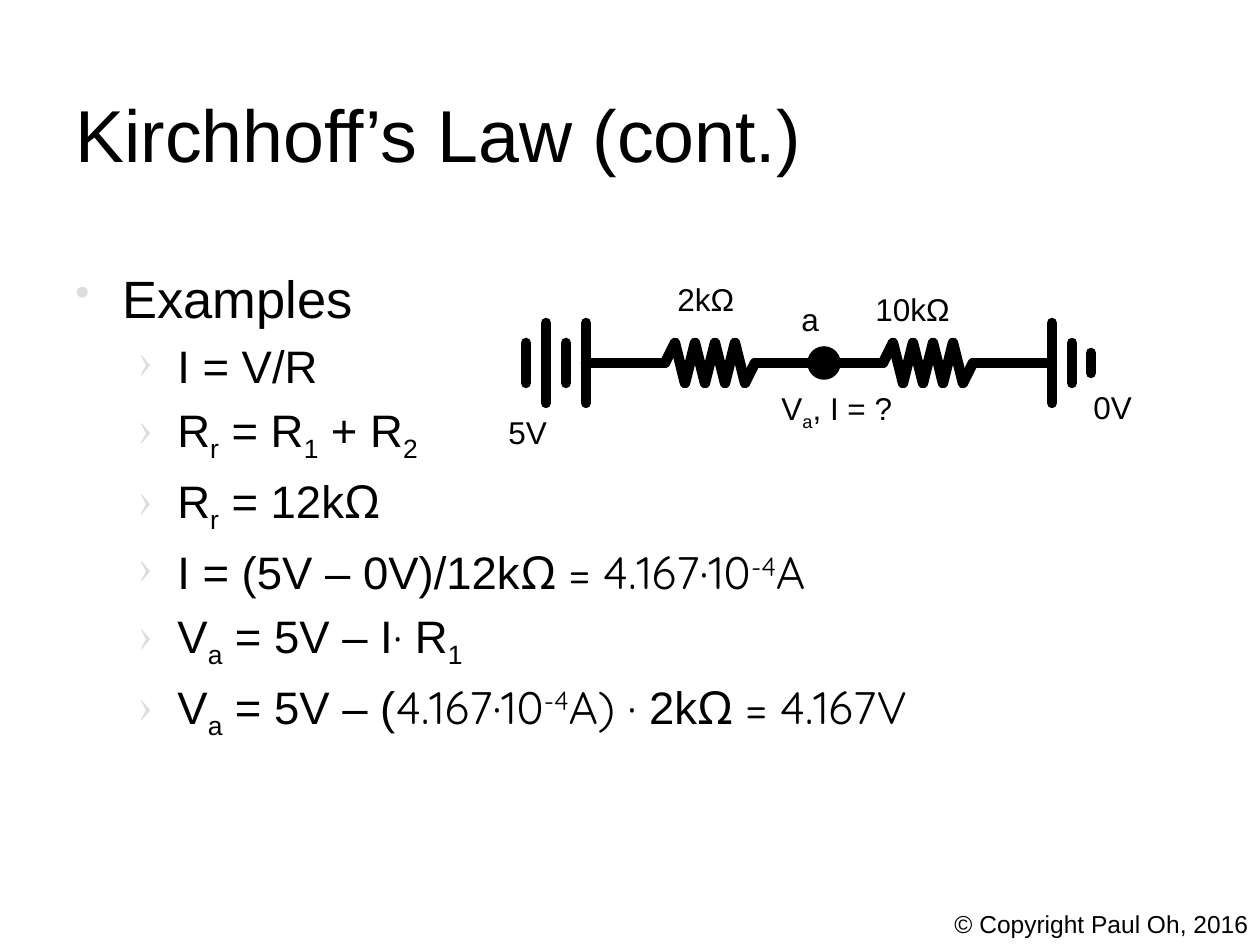
import itertools
from dataclasses import dataclass

import pptx
import pptx.dml.color
import pptx.enum.shapes
import pptx.enum.text
import pptx.oxml.ns
import pptx.oxml.xmlchemy
import pptx.util
from lxml import etree

SCALE = 914400 / 126
COLORS = {"ink": "000000", "bullet": "DDDDDD"}
SANS, ROUND = "Arial", "Quicksand"
SUB, SUPER = -25000, 30000
MIDDLE, STEP, AMPLITUDE = 363, 10, 20


@dataclass(frozen=True)
class Run:
    text: str
    base: int = 0
    font: str = SANS


@dataclass(frozen=True)
class Bullet:
    char: str
    percent: int
    level: int
    size: int
    left: int
    hang: int


@dataclass(frozen=True)
class Label:
    x: int
    y: int
    w: int
    h: int
    size: int
    runs: tuple[Run, ...]


@dataclass(frozen=True)
class Plate:
    x: int
    half: int


TOP = Bullet("•", 80, 0, 30, 47, 47)
SECOND = Bullet("›", 95, 1, 26, 102, 39)

POWER = (Run("4.167·10", font=ROUND), Run("-4", SUPER, ROUND))
BODY = [
    (TOP, (Run("Examples"),)),
    (SECOND, (Run("I = V/R"),)),
    (SECOND, (Run("R"), Run("r", SUB), Run(" = R"), Run("1", SUB),
              Run(" + R"), Run("2", SUB))),
    (SECOND, (Run("R"), Run("r", SUB), Run(" = 12k"), Run("Ω", font=ROUND))),
    (SECOND, (Run("I = (5V – 0V)/12k"), Run("Ω = ", font=ROUND), *POWER,
              Run("A", font=ROUND))),
    (SECOND, (Run("V"), Run("a", SUB), Run(" = 5V – I"), Run("·", font=ROUND),
              Run(" R"), Run("1", SUB))),
    (SECOND, (Run("V"), Run("a", SUB), Run(" = 5V – ("), *POWER,
              Run("A) ·", font=ROUND), Run(" 2k"),
              Run("Ω = 4.167V", font=ROUND))),
]

LABELS = [
    Label(496, 407, 64, 50, 18, (Run("5V"),)),
    Label(1081, 382, 64, 50, 18, (Run("0V"),)),
    Label(665, 274, 83, 50, 18, (Run("2kΩ"),)),
    Label(863, 284, 101, 50, 18, (Run("10kΩ"),)),
    Label(769, 383, 136, 50, 18, (Run("V"), Run("a", SUB), Run(", I = ?"))),
    Label(789, 294, 43, 50, 18, (Run("a"),)),
    Label(942, 903, 321, 43, 14, (Run("© Copyright Paul Oh, 2016"),)),
]

PLATES = [Plate(526, 20), Plate(546, 40), Plate(566, 20), Plate(586, 40),
          Plate(1052, 40), Plate(1072, 20), Plate(1091, 10)]
WIRES = [(586, 665), (755, 883), (973, 1052)]
RESISTORS = [665, 883]


def px(n: int) -> int:
    return round(n * SCALE)


def rgb(name: str) -> pptx.dml.color.RGBColor:
    return pptx.dml.color.RGBColor.from_string(COLORS[name])


def sub(parent, tag: str, **attrs: str):
    return etree.SubElement(parent, pptx.oxml.ns.qn(tag), attrs)


def add_runs(p, runs: tuple[Run, ...], size: int) -> None:
    for run in runs:
        r = p.add_run()
        r.text = run.text
        r.font.size = pptx.util.Pt(size)
        r.font.name = run.font
        r.font.color.rgb = rgb("ink")
        if run.base:
            r.font._element.set("baseline", str(run.base))


def add_box(shapes, x: int, y: int, w: int, h: int, wrap: bool):
    tf = shapes.add_textbox(px(x), px(y), px(w), px(h)).text_frame
    tf.word_wrap = wrap
    return tf


def add_label(shapes, label: Label) -> None:
    tf = add_box(shapes, label.x, label.y, label.w, label.h, False)
    tf.auto_size = pptx.enum.text.MSO_AUTO_SIZE.SHAPE_TO_FIT_TEXT
    add_runs(tf.paragraphs[0], label.runs, label.size)


def set_bullet(p, bullet: Bullet) -> None:
    p.level = bullet.level
    pPr = p._p.get_or_add_pPr()
    pPr.set("marL", str(px(bullet.left)))
    pPr.set("indent", str(-px(bullet.hang)))
    sub(sub(pPr, "a:spcBef"), "a:spcPct", val="20000")
    sub(sub(pPr, "a:buClr"), "a:srgbClr", val=COLORS["bullet"])
    sub(pPr, "a:buSzPct", val=str(bullet.percent * 1000))
    sub(pPr, "a:buChar", char=bullet.char)


def add_line(shapes, x1: int, y1: int, x2: int, y2: int) -> None:
    s = shapes.add_connector(pptx.enum.shapes.MSO_CONNECTOR.STRAIGHT,
                             px(x1), px(y1), px(x2), px(y2))
    s.line.width = pptx.util.Pt(6)
    s.line.color.rgb = rgb("ink")
    ln = s.line._get_or_add_ln()
    ln.set("cap", "rnd")
    sub(ln, "a:round")
    sub(s._element.spPr, "a:effectLst")


def add_resistor(shapes, x: int) -> None:
    group = shapes.add_group_shape()
    offsets = [0] + [-AMPLITUDE, AMPLITUDE] * 4 + [0]
    points = [(x + i * STEP, MIDDLE + dy) for i, dy in enumerate(offsets)]
    for start, end in itertools.pairwise(points):
        add_line(group.shapes, *start, *end)


def add_node(shapes, x: int, y: int, size: int) -> None:
    sp = shapes.add_shape(pptx.enum.shapes.MSO_SHAPE.OVAL,
                          px(x), px(y), px(size), px(size))
    sp.shadow.inherit = False
    sp.fill.solid()
    sp.fill.fore_color.rgb = rgb("ink")
    sp.line.color.rgb = rgb("ink")
    sp.line.width = pptx.util.Pt(2)


def main() -> None:
    prs = pptx.Presentation()
    prs.slide_width, prs.slide_height = px(1260), px(945)
    shapes = prs.slides.add_slide(prs.slide_layouts[6]).shapes

    tf = add_box(shapes, 63, 37, 1134, 193, True)
    tf.vertical_anchor = pptx.enum.text.MSO_ANCHOR.MIDDLE
    add_runs(tf.paragraphs[0], (Run("Kirchhoff’s Law (cont.)"),), 42)

    tf = add_box(shapes, 63, 260, 1134, 630, True)
    for i, (bullet, runs) in enumerate(BODY):
        p = tf.add_paragraph() if i else tf.paragraphs[0]
        set_bullet(p, bullet)
        add_runs(p, runs, bullet.size)

    for plate in PLATES:
        add_line(shapes, plate.x, MIDDLE + plate.half,
                 plate.x, MIDDLE - plate.half)
    for start, end in WIRES:
        add_line(shapes, start, MIDDLE, end, MIDDLE)
    for x in RESISTORS:
        add_resistor(shapes, x)
    add_node(shapes, 809, 348, 30)
    for label in LABELS:
        add_label(shapes, label)

    prs.save("out.pptx")


if __name__ == "__main__":
    main()
